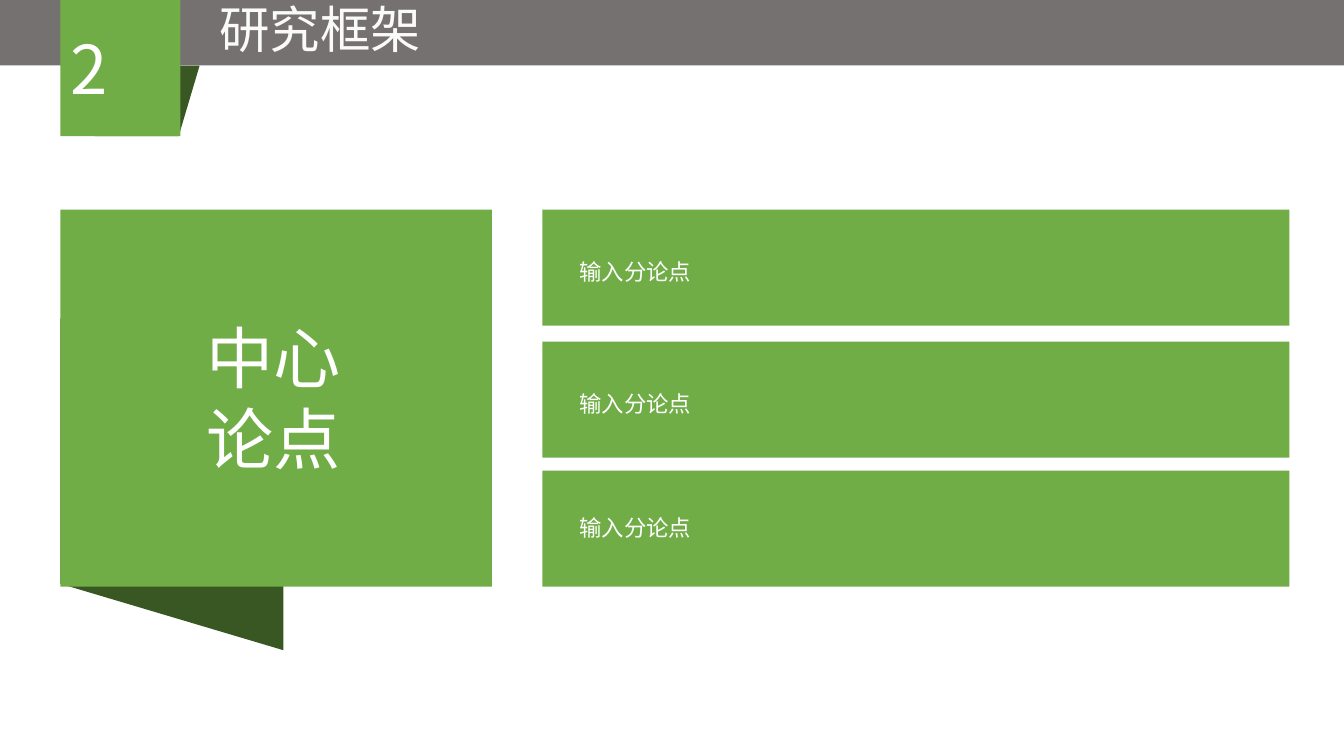
"""Build the research framework slide: one central thesis and three supporting points."""
from pptx import Presentation
from pptx import util as u
from pptx.dml.color import RGBColor
from pptx.enum import shapes, text
from pptx.oxml.ns import qn

COLORS = {"gray": "767171", "green": "70AD47", "dark": "385723", "white": "FFFFFF", "pale": "FAFAFA"}
FONT = "Noto Sans CJK SC"
KIND = shapes.MSO_SHAPE
ALIGN = text.PP_ALIGN

deck = Presentation()
deck.slide_width, deck.slide_height = u.Inches(13.33), u.Inches(7.5)
slide = deck.slides.add_slide(deck.slide_layouts[6])


def block(kind, color, box, turn=0):
    form = slide.shapes.add_shape(kind, *map(u.Inches, box))
    form.shadow.inherit = False
    form.fill.solid()
    form.fill.fore_color.rgb = RGBColor.from_string(COLORS[color])
    form.line.fill.background()
    form.rotation = turn
    return form


def write(form, lines, size, color="white", align=ALIGN.CENTER, **style):
    frame = form.text_frame
    for key, value in {"word_wrap": True, **style}.items():
        setattr(frame, key, value)
    for i, line in enumerate(lines):
        para = frame.paragraphs[0] if i == 0 else frame.add_paragraph()
        para.alignment = align
        run = para.add_run()
        run.text = line
        for key, value in {"size": u.Pt(size), "name": FONT}.items():
            setattr(run.font, key, value)
        run.font.color.rgb = RGBColor.from_string(COLORS[color])
        east = run.font._element.makeelement(qn("a:ea"), {"typeface": FONT})
        run.font._element.find(qn("a:latin")).addnext(east)


block(KIND.RECTANGLE, "gray", (0, -0.01, 13.33, 0.66))
block(KIND.FLOWCHART_DATA, "dark", (0.06, 3.7, 3.29, 2.21), 270)
block(KIND.RECTANGLE, "green", (0.6, 2.08, 4.28, 3.74))

labels = [
    ((-0.22, 3.09, 5.87, 1.7), ["中心", "论点"], 48, "white", ALIGN.CENTER),
    ((1.47, -0.07, 3.41, 0.7), ["研究框架"], 36, "pale", ALIGN.CENTER),
]
for top, shift in ((2.08, 0.43), (3.39, 0.43), (4.67, 0.38)):
    block(KIND.RECTANGLE, "green", (5.38, top, 7.41, 1.15))
    labels.append(((5.65, top + shift, 7.14, 0.37), ["输入分论点"], 16, "white", ALIGN.LEFT))

for box, lines, size, color, align in labels:
    label = slide.shapes.add_textbox(*map(u.Inches, box))
    write(label, lines, size, color, align, auto_size=text.MSO_AUTO_SIZE.SHAPE_TO_FIT_TEXT)

block(KIND.FLOWCHART_DATA, "dark", (0.94, 0.65, 1.04, 0.7), 180)
badge = block(KIND.RECTANGLE, "green", (0.6, -0.01, 1.19, 1.36))
write(badge, ["2"], 48, align=ALIGN.LEFT, vertical_anchor=text.MSO_ANCHOR.MIDDLE)

deck.save("out.pptx")
